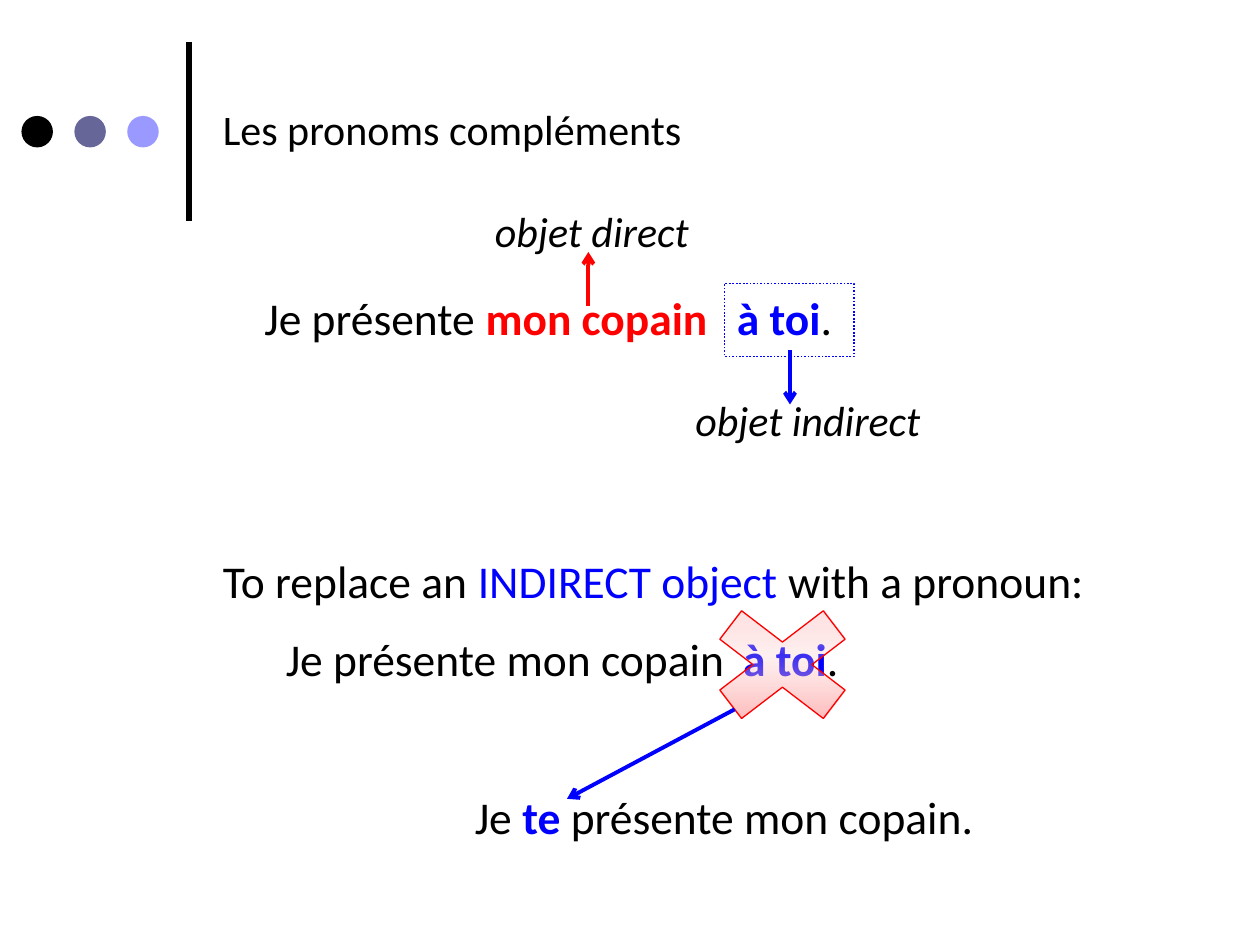
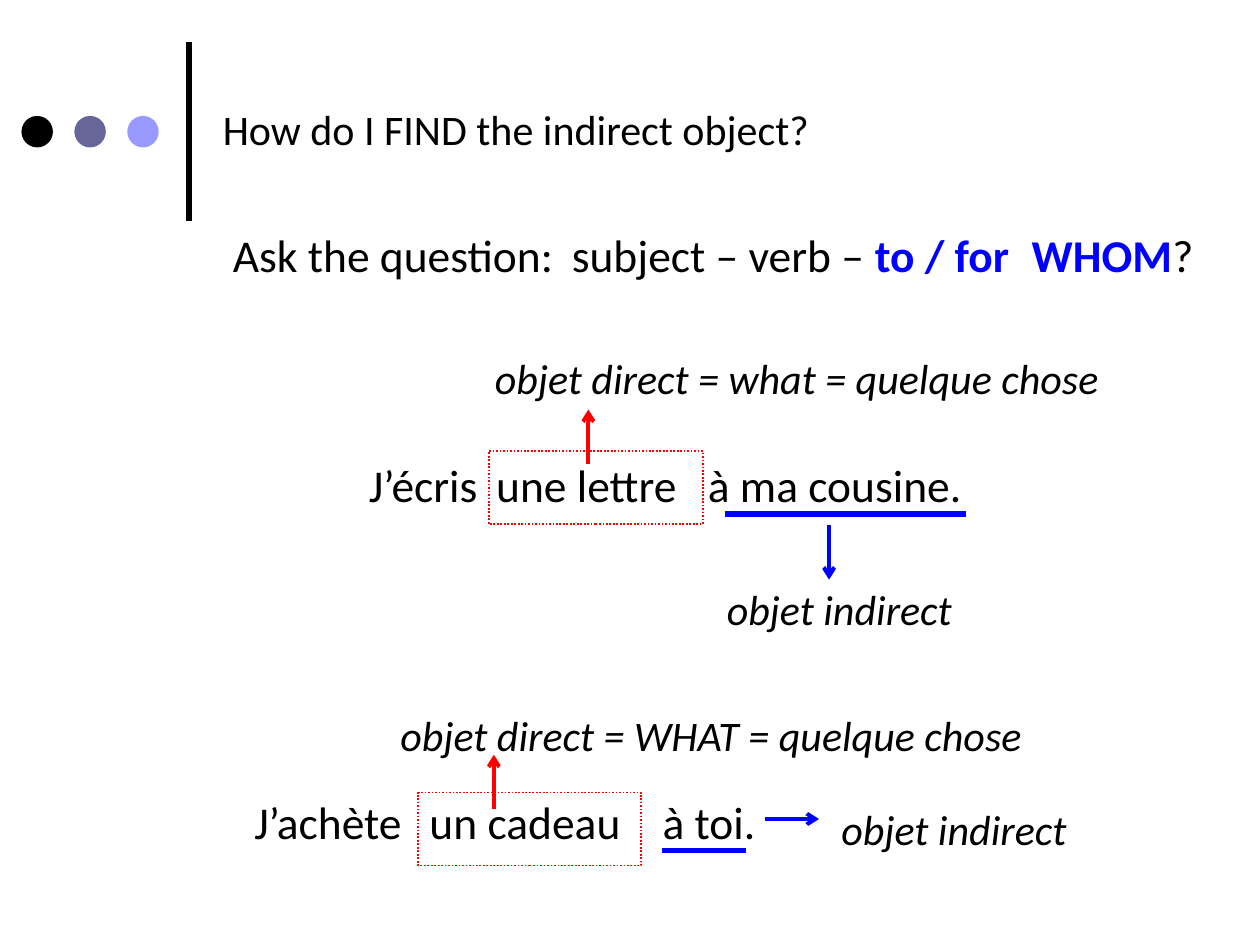
import pptx
import pptx.util
import pptx.dml.color
import pptx.enum.dml
import pptx.enum.shapes
import pptx.oxml
import pptx.oxml.ns

Inches = pptx.util.Inches
RGBColor = pptx.dml.color.RGBColor
Kind = pptx.enum.shapes.MSO_SHAPE
BLACK = RGBColor(0x00, 0x00, 0x00)
SLATE = RGBColor(0x66, 0x66, 0x99)
LILAC = RGBColor(0x99, 0x99, 0xFF)
RED = RGBColor(0xFF, 0x00, 0x00)
BLUE = RGBColor(0x00, 0x00, 0xFF)
FONT = "Calibri"
NOTE, BODY = 24, 26
SPACE = 'xmlns:a="http://schemas.openxmlformats.org/drawingml/2006/main"'
FADE = (
    f"<a:gradFill {SPACE}><a:gsLst>"
    '<a:gs pos="0"><a:srgbClr val="FFA0A0"/></a:gs>'
    '<a:gs pos="56000"><a:srgbClr val="FFC5C5"><a:alpha val="23000"/></a:srgbClr></a:gs>'
    '<a:gs pos="100000"><a:srgbClr val="FFE3E3"/></a:gs>'
    '</a:gsLst><a:lin ang="16200000" scaled="0"/></a:gradFill>'
)


class Deck:
    """Holds the style and the current slide, and draws each kind of element."""

    def __init__(self):
        self.file = pptx.Presentation()
        self.file.slide_width = Inches(10)
        self.file.slide_height = Inches(7.5)
        self.slide = None

    def start(self, title):
        self.slide = self.file.slides.add_slide(self.file.slide_layouts[6])
        self.line(1.5, 1.75, 1.5, 0.33, BLACK, 3)
        for i, color in enumerate((BLACK, SLATE, LILAC)):
            dot = self.shape(Kind.OVAL, 0.17 + 0.42 * i, 0.92, 0.25, 0.25)
            dot.fill.solid()
            dot.fill.fore_color.rgb = color
            dot.line.fill.background()
        self.text(1.67, 0.77, 7.5, [(title,)], NOTE)

    def text(self, x, y, width, runs, size=BODY, italic=False, tabs=()):
        box = self.slide.shapes.add_textbox(
            Inches(x), Inches(y), Inches(width), Inches(0.54 if size == BODY else 0.5))
        box.text_frame.word_wrap = True
        line = box.text_frame.paragraphs[0]
        for words, color, bold in ((*run, BLACK, False)[:3] if len(run) == 1 else run
                                   for run in runs):
            run = line.add_run()
            run.text = words
            run.font.name = FONT
            run.font.size = pptx.util.Pt(size)
            run.font.bold = bold
            run.font.italic = italic
            run.font.color.rgb = color
        if tabs:
            stops = "".join(f'<a:tab pos="{Inches(tab)}" algn="l"/>' for tab in tabs)
            line._p.get_or_add_pPr().append(
                pptx.oxml.parse_xml(f"<a:tabLst {SPACE}>{stops}</a:tabLst>"))

    def note(self, x, y, words, width=2.17):
        self.text(x, y, width, [(words,)], NOTE, italic=True)

    def shape(self, kind, x, y, width, height):
        shape = self.slide.shapes.add_shape(
            kind, Inches(x), Inches(y), Inches(width), Inches(height))
        shape.shadow.inherit = False
        return shape

    def frame(self, x, y, width, color):
        frame = self.shape(Kind.RECTANGLE, x, y, width, 0.58)
        frame.fill.background()
        frame.line.color.rgb = color
        frame.line.width = pptx.util.Pt(1)
        frame.line.dash_style = pptx.enum.dml.MSO_LINE.ROUND_DOT

    def cross(self, x, y, width, height):
        cross = self.shape(Kind.MATH_MULTIPLY, x, y, width, height)
        cross.line.color.rgb = RED
        cross.line.width = pptx.util.Pt(0.75)
        form = cross._element.spPr.find(pptx.oxml.ns.qn("a:prstGeom"))
        form.addnext(pptx.oxml.parse_xml(FADE))

    def line(self, x1, y1, x2, y2, color, weight):
        line = self.slide.shapes.add_connector(
            pptx.enum.shapes.MSO_CONNECTOR.STRAIGHT,
            Inches(x1), Inches(y1), Inches(x2), Inches(y2))
        line.line.color.rgb = color
        line.line.width = pptx.util.Pt(weight)
        line._element.spPr.append(pptx.oxml.parse_xml(f"<a:effectLst {SPACE}/>"))
        return line

    def arrow(self, x, y, dx, dy, color):
        arrow = self.line(x, y, x + dx, y + dy, color, 2.25)
        arrow.line._get_or_add_ln().append(
            pptx.oxml.parse_xml(f'<a:tailEnd {SPACE} type="arrow"/>'))


def draw_rule(deck):
    deck.start("Les pronoms compléments")
    deck.text(2, 2.25, 6.5, [("Je présente ",), ("mon copain\t", RED, True),
                             ("à toi", BLUE, True), (".",)], tabs=[3.75])
    deck.note(5.42, 3.08, "objet indirect")
    deck.frame(5.75, 2.25, 1.03, BLUE)
    deck.text(2.17, 4.96, 6.5, [("Je présente mon copain\t",),
                                ("à toi", BLUE, True), (".",)], tabs=[3.63])
    deck.text(1.67, 4.34, 8, [("To replace an ",), ("INDIRECT object ", BLUE, False),
                              ("with a pronoun:",)])
    deck.note(3.83, 1.58, "objet direct")
    deck.arrow(4.67, 2.43, 0, -0.43, RED)
    deck.arrow(6.27, 2.78, 0, 0.43, BLUE)
    deck.text(3.67, 6.21, 4.5, [("Je ",), ("te ", BLUE, True),
                                ("présente mon copain.",)])
    deck.cross(5.42, 4.67, 1.58, 1.21)
    deck.arrow(5.83, 5.63, -1.33, 0.71, BLUE)


def draw_search(deck):
    deck.start("How do I FIND the indirect object?")
    deck.text(2.83, 3.58, 6.5, [("J’écris\tune lettre\tà ma cousine.",)],
              tabs=[1.01, 2.69])
    deck.note(5.67, 4.58, "objet indirect")
    deck.frame(3.88, 3.58, 1.7, RED)
    deck.note(3.83, 2.75, "objet direct = what = quelque chose", 5.33)
    deck.arrow(4.67, 3.68, 0, -0.43, RED)
    deck.arrow(6.58, 4.17, 0, 0.43, BLUE)
    deck.text(1.75, 1.75, 8.17, [("Ask the question:\tsubject – verb – ",),
                                 ("to / for\tWHOM", BLUE, True), ("?",)],
              tabs=[2.69, 6.34])
    deck.text(1.92, 6.25, 6.5, [("J’achète\tun cadeau\tà toi.",)], tabs=[1.39, 3.24])
    deck.arrow(3.92, 6.42, 0, -0.43, RED)
    deck.note(3.08, 5.58, "objet direct = WHAT = quelque chose", 5.67)
    deck.note(6.58, 6.33, "objet indirect")
    deck.frame(3.32, 6.29, 1.77, RED)
    deck.arrow(6.07, 6.5, 0.43, 0, BLUE)
    deck.line(5.25, 6.75, 5.92, 6.75, BLUE, 3)
    deck.line(5.75, 4.08, 7.67, 4.08, BLUE, 3)


def main():
    deck = Deck()
    draw_rule(deck)
    draw_search(deck)
    deck.file.save("out.pptx")


if __name__ == "__main__":
    main()
